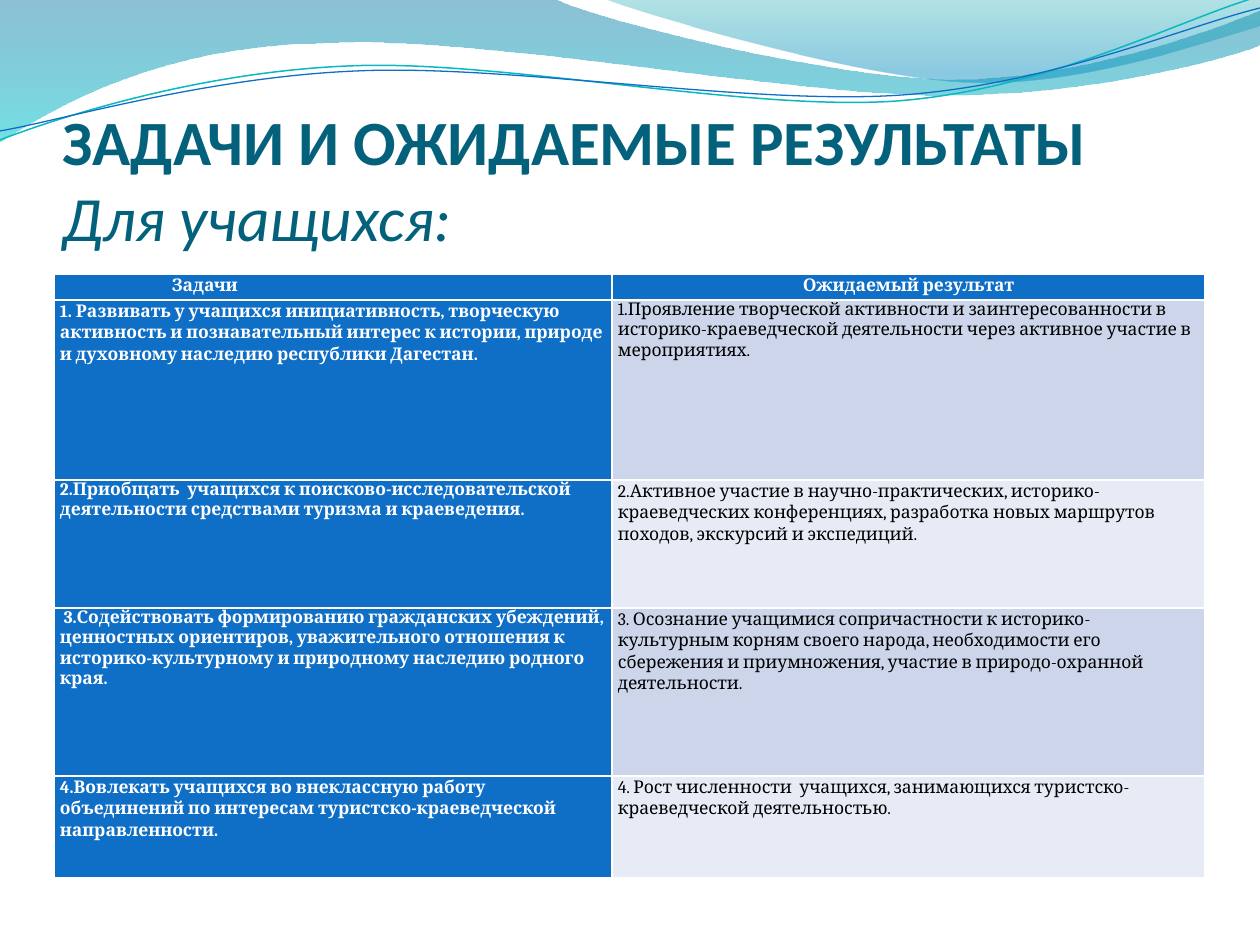
import math
from dataclasses import dataclass

from lxml import etree
from pptx import Presentation
from pptx import util as u
from pptx.dml.color import RGBColor
from pptx.enum import text
from pptx.oxml import ns

PX = 914400 / 126  # EMU in one px


@dataclass(frozen=True)
class Theme:
    title: str = "04617B"
    accent: str = "0F6FC6"
    white: str = "FFFFFF"
    black: str = "000000"
    bands: tuple = ("CCD5EA", "E7EBF5")
    title_font: str = "Calibri"
    body_font: str = "Cambria"
    title_size: int = 36
    body_size: int = 10


@dataclass(frozen=True)
class Stop:
    pos: float
    color: str
    opacity: int


@dataclass(frozen=True)
class Wave:
    """Outline of segments: one point is a line, three points are a curve."""
    start: tuple
    segments: tuple
    stops: tuple = ()
    line: str = ""
    width: float = 0
    tilt: float = 0
    center: tuple = (0, 0)


@dataclass(frozen=True)
class Cell:
    text: str
    spacing: float = 1.07


T = Theme()

WAVES = (
    Wave((0, 0), (
        ((554, -1),),
        ((600, 21), (837, 79), (955, 79)),
        ((1075, 79), (1207, 33), (1260, 11)),
        ((1261, 45),),
        ((1239, 55), (1096, 96), (940, 95)),
        ((784, 95), (481, 35), (324, 43)),
        ((163, 45), (58, 105), (-1, 142)),
    ), stops=(Stop(0, "0074A1", 45), Stop(1, "00C6CF", 55))),
    Wave((604, -1), (
        ((641, 14), (859, 78), (969, 82)),
        ((1079, 87), (1211, 40), (1260, 26)),
        ((1260, 0),),
    ), stops=(Stop(0, "00A1A9", 30), Stop(0.8, "008BBF", 45))),
    Wave((0, 140), (
        ((60, 117), (199, 72), (349, 66)),
        ((498, 59), (747, 112), (898, 101)),
        ((1049, 89), (1182, 19), (1257, -3)),
    ), line="0AB8BF", width=0.85, tilt=-2.7, center=(629, 72)),
    Wave((0, 131), (
        ((59, 121), (207, 77), (357, 71)),
        ((508, 64), (752, 106), (903, 95)),
        ((1053, 84), (1186, 26), (1260, 8)),
    ), line="0F6FC6", width=0.75, tilt=-2.7, center=(630, 74)),
)

COLUMNS = (558, 593)
ROW_HEIGHTS = (26, 180, 128, 168, 102)
ROWS = (
    (Cell("Задачи "), Cell("Ожидаемый результат")),
    (Cell("1. Развивать у учащихся инициативность, творческую активность и познавательный "
          "интерес к истории, природе и духовному наследию республики Дагестан."),
     Cell("1.Проявление творческой активности и заинтересованности в  историко-краеведческой "
          "деятельности через активное участие в мероприятиях.", 1)),
    (Cell("2.Приобщать  учащихся к поисково-исследовательской деятельности средствами "
          "туризма и краеведения.", 1),
     Cell("2.Активное участие в научно-практических, историко-краеведческих конференциях, "
          "разработка новых маршрутов походов, экскурсий и экспедиций.")),
    (Cell(" 3.Содействовать формированию гражданских убеждений, ценностных ориентиров, "
          "уважительного отношения к историко-культурному и природному наследию родного края.", 1),
     Cell("3. Осознание учащимися сопричастности к историко-культурным корням своего народа, "
          "необходимости его сбережения и приумножения, участие в природо-охранной деятельности.")),
    (Cell("4.Вовлекать учащихся во внеклассную работу объединений по интересам "
          "туристско-краеведческой направленности."),
     Cell("4. Рост численности  учащихся, занимающихся туристско-краеведческой деятельностью.")),
)


def px(n: float) -> u.Emu:
    return u.Emu(round(n * PX))


def rgb(color: str) -> RGBColor:
    return RGBColor.from_string(color)


def format_run(r, font: str, size: int, color: str, bold: bool, italic: bool = False) -> None:
    r.font.name, r.font.size = font, u.Pt(size)
    r.font.bold, r.font.italic = bold, italic
    r.font.color.rgb = rgb(color)


def level(point: tuple, wave: Wave) -> tuple:
    """Position of a point before the wave is tilted about its center, in EMU."""
    a = math.radians(-wave.tilt)
    (cx, cy), (x, y) = wave.center, point
    dx, dy = x - cx, y - cy
    return (px(cx + dx * math.cos(a) - dy * math.sin(a)),
            px(cy + dx * math.sin(a) + dy * math.cos(a)))


def bend(sp, wave: Wave) -> None:
    """Turn each run of three straight pieces into one Bezier curve."""
    pieces = iter(sp._element.spPr.findall(".//" + ns.qn("a:lnTo")))
    for seg in wave.segments:
        group = [next(pieces) for _ in seg]
        if len(group) == 3:
            curve = etree.Element(ns.qn("a:cubicBezTo"))
            group[0].addprevious(curve)
            for piece in group:
                curve.append(piece[0])
                piece.getparent().remove(piece)


def add_wave(s, wave: Wave) -> None:
    builder = s.shapes.build_freeform(*level(wave.start, wave))
    points = [level(pt, wave) for seg in wave.segments for pt in seg]
    builder.add_line_segments(points, close=bool(wave.stops))
    sp = builder.convert_to_shape()
    bend(sp, wave)
    sp.rotation = wave.tilt
    sp.shadow.inherit = False
    if not wave.stops:
        sp.fill.background()
        sp.line.color.rgb = rgb(wave.line)
        sp.line.width = u.Pt(wave.width)
        return
    sp.line.fill.background()
    sp.fill.gradient()
    sp.fill.gradient_angle = 270
    for gs, stop in zip(sp.fill.gradient_stops, wave.stops):
        gs.position, gs.color.rgb = stop.pos, rgb(stop.color)
    # Transparency of the gradient stops
    colors = sp._element.spPr.findall(".//" + ns.qn("a:srgbClr"))
    for clr, stop in zip(colors, wave.stops):
        etree.SubElement(clr, ns.qn("a:alpha"), val=str(stop.opacity * 1000))


def add_title(s) -> None:
    sp = s.shapes.add_textbox(px(63), px(97), px(1134), px(157))
    tf = sp.text_frame
    tf.word_wrap = True
    tf.vertical_anchor = text.MSO_ANCHOR.BOTTOM
    tf.margin_left = tf.margin_right = tf.margin_bottom = 0
    p = tf.paragraphs[0]
    p.text = "ЗАДАЧИ И ОЖИДАЕМЫЕ РЕЗУЛЬТАТЫ\vДля учащихся:"
    for i, r in enumerate(p.runs):
        format_run(r, T.title_font, T.title_size, T.title, bold=i == 0, italic=i == 1)


def fill_cell(cell, data: Cell, row: int, col: int) -> None:
    accent = row == 0 or col == 0
    cell.fill.solid()
    cell.fill.fore_color.rgb = rgb(T.accent if accent else T.bands[(row - 1) % 2])
    cell.margin_left = cell.margin_right = px(6)
    cell.margin_top = cell.margin_bottom = 0
    p = cell.text_frame.paragraphs[0]
    p.text = data.text
    p.line_spacing = data.spacing
    format_run(p.runs[0], T.body_font, T.body_size, T.white if accent else T.black, bold=accent)
    if row == 0:
        p.alignment = (text.PP_ALIGN.JUSTIFY, text.PP_ALIGN.CENTER)[col]
        if col == 0:
            p._p.get_or_add_pPr().set("indent", str(px(112)))


def add_goals_table(s) -> None:
    # White cell borders come from the default table style
    table = s.shapes.add_table(len(ROWS), len(COLUMNS), px(54), px(274),
                               px(sum(COLUMNS)), px(sum(ROW_HEIGHTS))).table
    table.first_col = True
    for column, width in zip(table.columns, COLUMNS):
        column.width = px(width)
    for i, (height, cells) in enumerate(zip(ROW_HEIGHTS, ROWS)):
        table.rows[i].height = px(height)
        for j, data in enumerate(cells):
            fill_cell(table.cell(i, j), data, i, j)


def main() -> None:
    prs = Presentation()
    prs.slide_width, prs.slide_height = px(1260), px(945)
    s = prs.slides.add_slide(prs.slide_layouts[6])
    for wave in WAVES:
        add_wave(s, wave)
    add_title(s)
    add_goals_table(s)
    prs.save("out.pptx")


if __name__ == "__main__":
    main()
